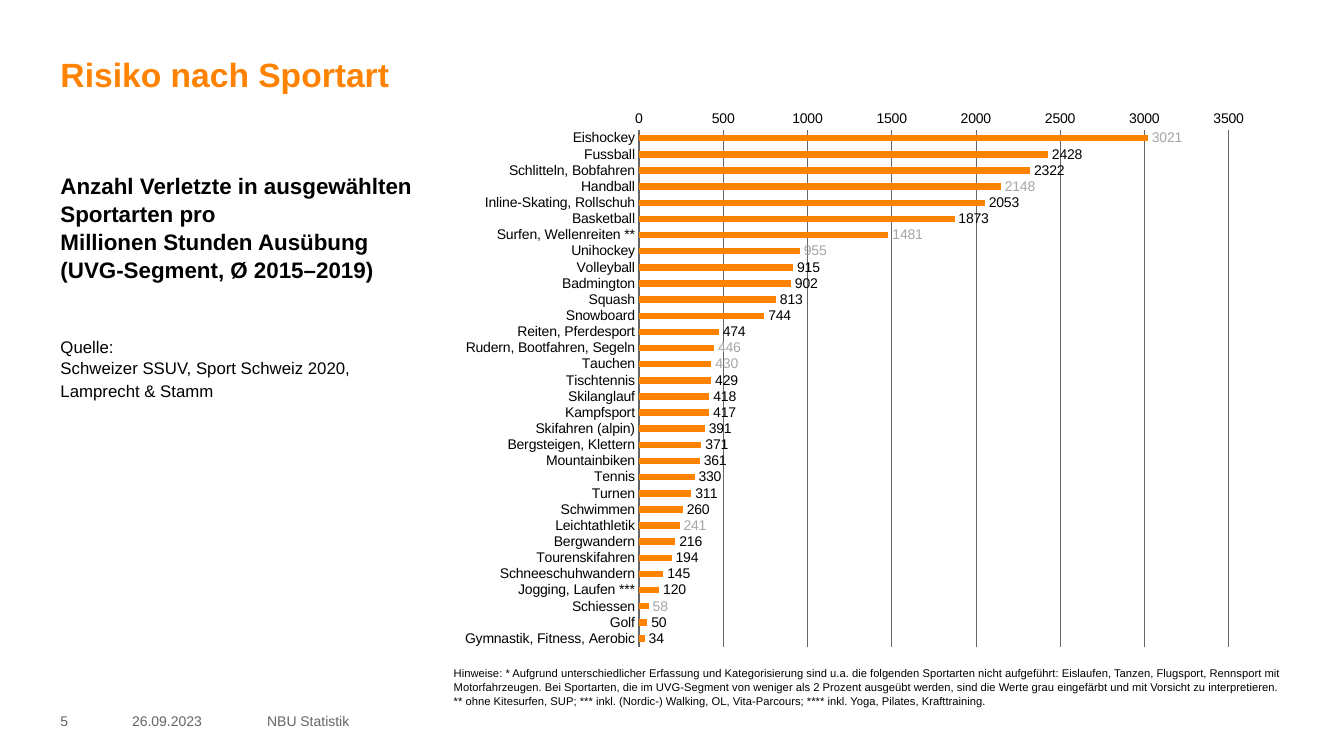
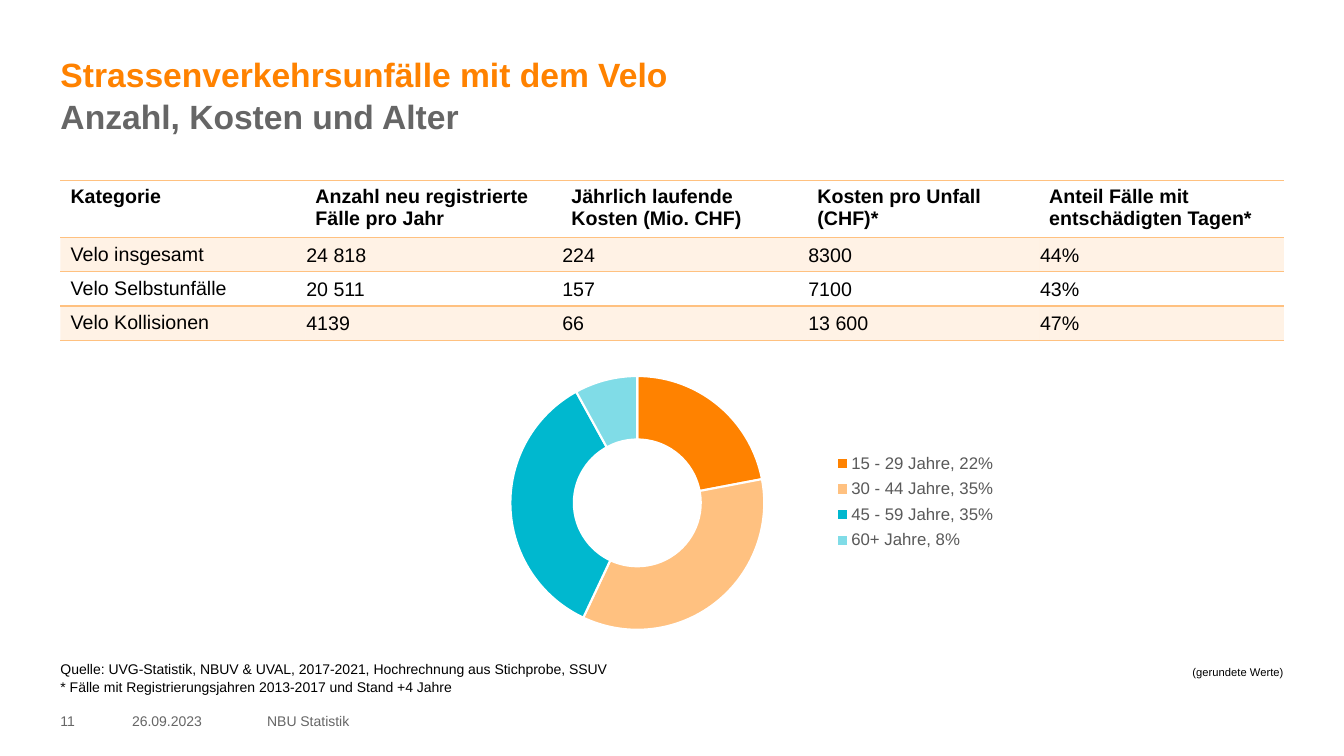
"""Build two slides on accident statistics: risk by sport and bicycle accidents."""
import pptx
import pptx.chart.data
import pptx.dml.color
import pptx.enum.chart
import pptx.enum.text
import pptx.oxml
import pptx.oxml.ns
import pptx.util

WIDTH, HEIGHT = pptx.util.Inches(13.33), pptx.util.Inches(7.5)
FONT = "Arial"
LEFT, FULL = 4.5, 91
LEADING = 1.04
COLORS = {
    "orange": "FF8200", "peach": "FFC180", "teal": "00B8CF", "aqua": "80DCE7",
    "gray": "666666", "legend": "595959", "pale": "A6A6A6",
    "black": "000000", "white": "FFFFFF",
}
INJURIES = {
    "Eishockey": 3021, "Fussball": 2428, "Schlitteln, Bobfahren": 2322,
    "Handball": 2148, "Inline-Skating, Rollschuh": 2053, "Basketball": 1873,
    "Surfen, Wellenreiten **": 1481, "Unihockey": 955, "Volleyball": 915,
    "Badmington": 902, "Squash": 813, "Snowboard": 744,
    "Reiten, Pferdesport": 474, "Rudern, Bootfahren, Segeln": 446,
    "Tauchen": 430, "Tischtennis": 429, "Skilanglauf": 418, "Kampfsport": 417,
    "Skifahren (alpin)": 391, "Bergsteigen, Klettern": 371,
    "Mountainbiken": 361, "Tennis": 330, "Turnen": 311, "Schwimmen": 260,
    "Leichtathletik": 241, "Bergwandern": 216, "Tourenskifahren": 194,
    "Schneeschuhwandern": 145, "Jogging, Laufen ***": 120, "Schiessen": 58,
    "Golf": 50, "Gymnastik, Fitness, Aerobic": 34,
}
RARE_SPORTS = {
    "Eishockey", "Handball", "Surfen, Wellenreiten **", "Unihockey",
    "Rudern, Bootfahren, Segeln", "Tauchen", "Leichtathletik", "Schiessen",
}
AGES = {
    "15 - 29 Jahre, 22%": (22, "orange"), "30 - 44 Jahre, 35%": (35, "peach"),
    "45 - 59 Jahre, 35%": (35, "teal"), "60+ Jahre, 8%": (8, "aqua"),
}
BIKE_COSTS = [
    ["Kategorie", "Anzahl neu registrierte Fälle pro Jahr",
     "Jährlich laufende Kosten (Mio. CHF)", "Kosten pro Unfall (CHF)*",
     "Anteil Fälle mit entschädigten Tagen*"],
    ["Velo insgesamt", "24 818", "224", "8300", "44%"],
    ["Velo Selbstunfälle", "20 511", "157", "7100", "43%"],
    ["Velo Kollisionen", "4139", "66", "13 600", "47%"],
]


def across(percent):
    """Return a share of the slide's width."""
    return int(WIDTH * percent / 100)


def down(percent):
    """Return a share of the slide's height."""
    return int(HEIGHT * percent / 100)


def place(left, top, width, height):
    """Turn percentages of the slide into a position and size."""
    return across(left), down(top), across(width), down(height)


def rgb(color):
    """Look up a named colour."""
    return pptx.dml.color.RGBColor.from_string(COLORS[color])


def set_font(font, size, color="black", bold=False):
    """Apply the deck's typeface with a size, colour and weight."""
    font.name, font.size, font.bold = FONT, pptx.util.Pt(size), bold
    font.color.rgb = rgb(color)


def write(paragraph, text, size=10, color="black", bold=False, before=0,
          leading=None, align=None):
    """Fill a paragraph with formatted text."""
    set_font(paragraph.add_run().font, size, color, bold)
    paragraph.runs[0].text = text
    paragraph.alignment = align
    if leading:
        paragraph.line_spacing = leading
    if before:
        paragraph.space_before = pptx.util.Pt(before)


def set_margins(holder, left, top, right, bottom):
    """Set the inner margins of a text frame or cell in inches."""
    holder.margin_left, holder.margin_top, holder.margin_right, holder.margin_bottom = (
        pptx.util.Inches(inset) for inset in (left, top, right, bottom))


def add_text(slide, area, lines, anchor="TOP", wrap=True, insets=(0, 0, 0, 0), **style):
    """Add a text box whose lines are (text, own format) pairs over a common style."""
    frame = slide.shapes.add_textbox(*place(*area)).text_frame
    frame.word_wrap = wrap
    frame.vertical_anchor = pptx.enum.text.MSO_ANCHOR[anchor]
    set_margins(frame, *insets)
    for index, (text, own) in enumerate(lines):
        paragraph = frame.add_paragraph() if index else frame.paragraphs[0]
        write(paragraph, text, **{"leading": LEADING, **style, **own})


def add_page(deck, number, title, subtitle=None):
    """Add a blank slide with its title and footer."""
    slide = deck.slides.add_slide(deck.slide_layouts[6])
    headings = [(title, {"color": "orange"})]
    if subtitle:
        headings.append((subtitle, {"color": "gray"}))
    add_text(slide, (LEFT, 6.93, FULL, 12.53), headings, size=24, bold=True)
    for left, width, text in ((LEFT, 4.13, str(number)),
                              (9.83, 8.85, "26.09.2023"),
                              (19.88, 64.35, "NBU Statistik")):
        add_text(slide, (left, 94, width, 2.67), [(text, {})], anchor="MIDDLE",
                 color="gray", leading=None)
    return slide


def set_layout(element, index, shares, inner=False):
    """Give a chart part a fixed position as shares of the chart."""
    for layout in element.xpath("c:layout"):
        element.remove(layout)
    target = '<c:layoutTarget val="inner"/>' if inner else ""
    modes = "".join(f'<c:{axis}Mode val="edge"/>' for axis in "xy")
    sizes = "".join(f'<c:{side} val="{share}"/>' for side, share in zip("xywh", shares))
    element.insert(index, pptx.oxml.parse_xml(
        f'<c:layout {pptx.oxml.ns.nsdecls("c")}><c:manualLayout>{target}{modes}{sizes}'
        "</c:manualLayout></c:layout>"))


def add_chart(slide, kind, area, plot_shares, values):
    """Add a one-series chart with a fixed plot area."""
    data = pptx.chart.data.CategoryChartData(number_format="0")
    data.categories = list(values)
    data.add_series("Series 1", list(values.values()))
    chart = slide.shapes.add_chart(
        pptx.enum.chart.XL_CHART_TYPE[kind], *place(*area), data).chart
    chart.has_title = chart.has_legend = False
    set_font(chart.font, 10)
    set_layout(chart.element.xpath("c:chart/c:plotArea")[0], 0, plot_shares, inner=True)
    return chart


def format_axes(chart):
    """List the categories downwards under a value scale with gridlines."""
    sports, scale = chart.category_axis, chart.value_axis
    sports.reverse_order = True
    scale.minimum_scale, scale.maximum_scale, scale.major_unit = 0, 3500, 500
    scale.has_major_gridlines = True
    scale.tick_labels.number_format = "0"
    scale.tick_labels.number_format_is_linked = False
    for axis in (sports, scale):
        axis.major_tick_mark = pptx.enum.chart.XL_TICK_MARK.NONE
        set_font(axis.tick_labels.font, 10)
    scale.format.line.fill.background()
    for line, width in ((sports.format.line, 0.75), (scale.major_gridlines.format.line, 0.5)):
        line.color.rgb, line.width = rgb("gray"), pptx.util.Pt(width)


def add_risk_chart(slide):
    """Add the bar chart of injuries, with uncertain values in pale labels."""
    chart = add_chart(slide, "BAR_CLUSTERED", (29.93, 13.33, 69.09, 73.47),
                      (0.255, 0.053, 0.635, 0.93), INJURIES)
    format_axes(chart)
    plot = chart.plots[0]
    plot.gap_width, plot.vary_by_categories = 150, False
    bars = plot.series[0]
    bars.format.fill.solid()
    bars.format.fill.fore_color.rgb = rgb("orange")
    outside = pptx.enum.chart.XL_LABEL_POSITION.OUTSIDE_END
    labels = bars.data_labels
    labels.show_value, labels.position = True, outside
    set_font(labels.font, 10)
    for index, sport in enumerate(INJURIES):
        if sport in RARE_SPORTS:
            label = bars.points[index].data_label
            set_font(label.font, 10, "pale")
            label.position = outside


def add_age_chart(slide):
    """Add the ring chart of age groups with its legend."""
    chart = add_chart(slide, "DOUGHNUT", (18.08, 47.87, 58.51, 41.6),
                      (0.34, 0.045, 0.323, 0.807),
                      {age: share for age, (share, _) in AGES.items()})
    chart.plots[0].vary_by_categories = True
    chart.element.xpath(".//c:holeSize")[0].set("val", "55")
    for index, (_, color) in enumerate(AGES.values()):
        segment = chart.plots[0].series[0].points[index].format
        segment.fill.solid()
        segment.fill.fore_color.rgb = rgb(color)
        segment.line.color.rgb, segment.line.width = rgb("white"), pptx.util.Pt(1.5)
    chart.has_legend = True
    chart.legend.position = pptx.enum.chart.XL_LEGEND_POSITION.RIGHT
    chart.legend.include_in_layout = False
    set_font(chart.legend.font, 12, "legend")
    set_layout(chart.element.xpath("c:chart/c:legend")[0], 1, (0.73, 0.27, 0.25, 0.35))


def rule_cell(cell):
    """Draw rules above and below a cell and none at its sides."""
    rule = f'<a:solidFill><a:srgbClr val="{COLORS["peach"]}"/></a:solidFill>'
    sides = {"L": "<a:noFill/>", "R": "<a:noFill/>", "T": rule, "B": rule}
    properties = cell._tc.get_or_add_tcPr()
    for index, (side, fill) in enumerate(sides.items()):
        properties.insert(index, pptx.oxml.parse_xml(
            f'<a:ln{side} {pptx.oxml.ns.nsdecls("a")} w="12700">{fill}</a:ln{side}>'))


def fill_cell(cell, tinted):
    """Fill a cell with white or a light tint."""
    cell.fill.solid()
    cell.fill.fore_color.rgb = rgb("peach" if tinted else "white")
    if tinted:
        tint = cell._tc.tcPr.xpath("a:solidFill/a:srgbClr")[0]
        tint.append(pptx.oxml.parse_xml(
            f'<a:alpha {pptx.oxml.ns.nsdecls("a")} val="20000"/>'))


def add_cost_table(slide):
    """Add the table of bicycle accident cases and costs."""
    table = slide.shapes.add_table(
        len(BIKE_COSTS), len(BIKE_COSTS[0]), *place(LEFT, 23.87, FULL, 20.8)).table
    table.horz_banding = False
    for column, width in zip(table.columns, (18.22, 19.05, 18.3, 17.25, 18.22)):
        column.width = across(width)
    for row_index, texts in enumerate(BIKE_COSTS):
        heading = row_index == 0
        table.rows[row_index].height = down(7.2 if heading else 4.53)
        for column_index, text in enumerate(texts):
            cell = table.cell(row_index, column_index)
            write(cell.text_frame.paragraphs[0], text, size=14, bold=heading)
            if heading or column_index == 0:
                set_margins(cell, 0.1, 0.05, 0.1, 0.05)
            else:
                set_margins(cell, 0.01, 0.01, 0.01, 0)
            cell.vertical_anchor = pptx.enum.text.MSO_ANCHOR["TOP" if heading else "MIDDLE"]
            fill_cell(cell, tinted=row_index % 2 == 1)
            rule_cell(cell)


def build_risk_slide(deck):
    """Build the slide on risk by sport."""
    slide = add_page(deck, 5, "Risiko nach Sportart")
    headline = {"size": 16, "bold": True}
    add_text(slide, (LEFT, 22.67, 43.1, 9.47), [
        ("Anzahl Verletzte in ausgewählten", headline),
        ("Sportarten pro", headline),
        ("Millionen Stunden Ausübung", headline),
        ("(UVG-Segment, Ø 2015–2019)", headline),
        ("Quelle:", {"before": 38}),
        ("Schweizer SSUV, Sport Schweiz 2020,", {}),
        ("Lamprecht & Stamm", {"leading": pptx.util.Pt(16)}),
    ], size=12)
    add_risk_chart(slide)
    add_text(slide, (33.76, 88.13, 63.47, 7.2), [
        ("Hinweise: * Aufgrund unterschiedlicher Erfassung und Kategorisierung sind u.a. "
         "die folgenden Sportarten nicht aufgeführt: Eislaufen, Tanzen, Flugsport, "
         "Rennsport mit Motorfahrzeugen. Bei Sportarten, die im UVG-Segment von weniger "
         "als 2 Prozent ausgeübt werden, sind die Werte grau eingefärbt und mit Vorsicht "
         "zu interpretieren.", {}),
        ("** ohne Kitesurfen, SUP; *** inkl. (Nordic-) Walking, OL, Vita-Parcours; "
         "**** inkl. Yoga, Pilates, Krafttraining.", {}),
    ], size=8)


def build_bike_slide(deck):
    """Build the slide on bicycle accidents."""
    slide = add_page(deck, 11, "Strassenverkehrsunfälle mit dem Velo",
                     "Anzahl, Kosten und Alter")
    add_cost_table(slide)
    add_age_chart(slide)
    add_text(slide, (LEFT, 87.33, 63.24, 5.73), [
        ("Quelle: UVG-Statistik, NBUV & UVAL, 2017-2021, Hochrechnung aus Stichprobe, SSUV", {}),
        ("* Fälle mit Registrierungsjahren 2013-2017 und Stand +4 Jahre", {}),
    ])
    add_text(slide, (87.85, 87.33, 8.4, 3.2), [("(gerundete Werte)", {})], size=8,
             wrap=False, insets=(0.1, 0.05, 0.1, 0.05),
             align=pptx.enum.text.PP_ALIGN.RIGHT)


def main():
    """Create and save the deck."""
    deck = pptx.Presentation()
    deck.slide_width, deck.slide_height = WIDTH, HEIGHT
    build_risk_slide(deck)
    build_bike_slide(deck)
    deck.save("out.pptx")


if __name__ == "__main__":
    main()
